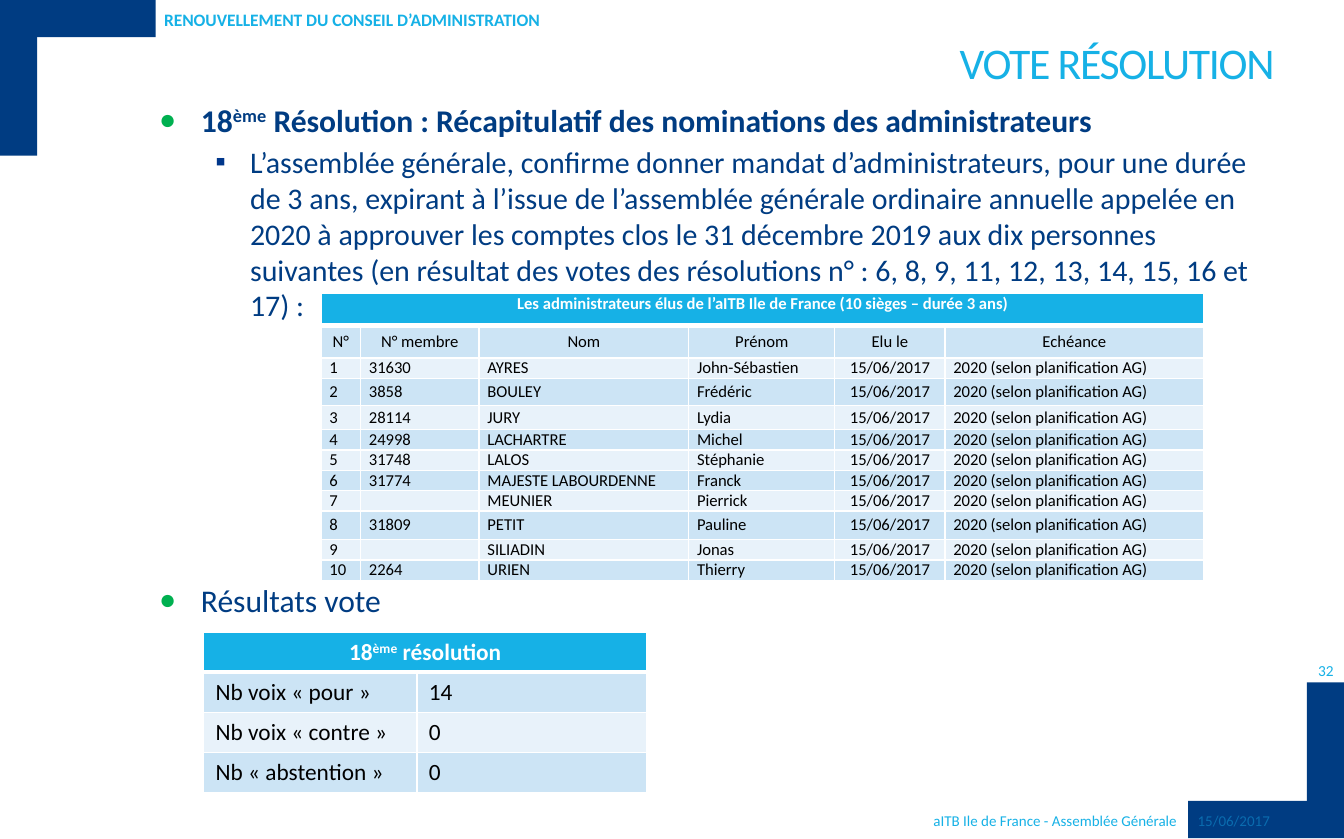
from pptx import Presentation, oxml, util as u
from pptx.dml.color import RGBColor
from pptx.enum import shapes, text

NAVY = RGBColor(0x00, 0x3C, 0x82)
CYAN = RGBColor(0x16, 0xB1, 0xE6)
BLUE = RGBColor(0x0A, 0x6C, 0xAF)
PALE = RGBColor(0xCC, 0xE4, 0xF5)
PALER = RGBColor(0xE8, 0xF2, 0xFA)
WHITE = RGBColor(0xFF, 0xFF, 0xFF)
BLACK = RGBColor(0x00, 0x00, 0x00)
FONT = "Calibri"
NS = 'xmlns:a="http://schemas.openxmlformats.org/drawingml/2006/main"'
LEFT, CENTER, RIGHT = (text.PP_ALIGN.LEFT, text.PP_ALIGN.CENTER, text.PP_ALIGN.RIGHT)
TOP, MIDDLE = text.MSO_ANCHOR.TOP, text.MSO_ANCHOR.MIDDLE

ELECTED = [
    ("31630", "AYRES", "John-Sébastien"),
    ("3858", "BOULEY", "Frédéric"),
    ("28114", "JURY", "Lydia"),
    ("24998", "LACHARTRE", "Michel"),
    ("31748", "LALOS", "Stéphanie"),
    ("31774", "MAJESTE LABOURDENNE", "Franck"),
    ("", "MEUNIER", "Pierrick"),
    ("31809", "PETIT", "Pauline"),
    ("", "SILIADIN", "Jonas"),
    ("2264", "URIEN", "Thierry"),
]
VOTES = [("Nb voix « pour »", "14"), ("Nb voix « contre »", "0"),
         ("Nb « abstention »", "0")]


def add_runs(p, content, size, color, bold=False):
    """Add runs to a paragraph; a piece marked with a leading ^ is superscript."""
    for piece in content if isinstance(content, list) else [content]:
        r = p.add_run()
        r.text = piece.lstrip("^")
        r.font.name, r.font.size, r.font.bold = FONT, u.Pt(size), bold
        r.font.color.rgb = color
        if piece.startswith("^"):
            r._r.get_or_add_rPr().set("baseline", "30000")


def set_margins(target, left, top, right, bottom):
    target.margin_left, target.margin_top = u.Inches(left), u.Inches(top)
    target.margin_right, target.margin_bottom = u.Inches(right), u.Inches(bottom)


def add_box(s, box, margins=(0.1, 0.05, 0.1, 0.05), anchor=TOP):
    tf = s.shapes.add_textbox(*map(u.Inches, box)).text_frame
    tf.word_wrap, tf.vertical_anchor = True, anchor
    set_margins(tf, *margins)
    return tf


def add_label(s, box, words, size, color, align=LEFT, bold=False, **frame):
    p = add_box(s, box, **frame).paragraphs[0]
    p.alignment = align
    add_runs(p, words, size, color, bold)


def add_corner(s, x, y, at_end):
    """Draw an L of two bars in a square box, its angle at top left or bottom right."""
    length, thick = 1.3, 0.31
    shift = length - thick if at_end else 0
    for bar in ((x, y + shift, length, thick), (x + shift, y, thick, length)):
        sp = s.shapes.add_shape(shapes.MSO_SHAPE.RECTANGLE, *map(u.Inches, bar))
        sp.shadow.inherit = False
        sp.fill.solid()
        sp.fill.fore_color.rgb = NAVY
        sp.line.fill.background()


def add_title(s, box):
    sp = s.shapes.title
    sp.left, sp.top, sp.width, sp.height = map(u.Inches, box)
    tf = sp.text_frame
    tf.word_wrap, tf.vertical_anchor = True, TOP
    tf.auto_size = text.MSO_AUTO_SIZE.NONE
    set_margins(tf, 0.2, 0.05, 0.09, 0)
    p = tf.paragraphs[0]
    p.alignment, p.line_spacing = RIGHT, u.Pt(24)
    add_runs(p, "VOTE RÉSOLUTION", 26.3, CYAN)
    p.runs[0]._r.get_or_add_rPr().set("spc", "-80")


def add_bullet(p, mark, color, indent, hanging, percent=100):
    pPr = p._p.get_or_add_pPr()
    pPr.set("marL", str(u.Inches(indent)))
    pPr.set("indent", str(-u.Inches(hanging)))
    for xml in (f'<a:buClr {NS}><a:srgbClr val="{color}"/></a:buClr>',
                f'<a:buSzPct {NS} val="{percent * 1000}"/>',
                f'<a:buFont {NS} typeface="Arial"/>',
                f'<a:buChar {NS} char="{mark}"/>'):
        pPr.append(oxml.parse_xml(xml))


def add_body(s, box):
    tf = add_box(s, box)
    heading = tf.paragraphs[0]
    mandate, results = tf.add_paragraph(), tf.add_paragraph()
    mandate.level = 1
    mandate.space_before = u.Pt(3)
    results.space_before = u.Pt(155)  # room for the table of elected members
    for p in (heading, results):
        add_bullet(p, "●", "00B050", 0.35, 0.35, 90)
    add_bullet(mandate, "▪", "00378B", 0.76, 0.29)
    add_runs(heading, ["18", "^ème", " Résolution : Récapitulatif des nominations "
                       "des administrateurs"], 19, NAVY, True)
    add_runs(mandate, "L’assemblée générale, confirme donner mandat d’administrateurs, "
             "pour une durée de 3 ans, expirant à l’issue de l’assemblée générale "
             "ordinaire annuelle appelée en 2020 à approuver les comptes clos le "
             "31 décembre 2019 aux dix personnes suivantes (en résultat des votes des "
             "résolutions n° : 6, 8, 9, 11, 12, 13, 14, 15, 16 et 17) :", 18, NAVY)
    add_runs(results, "Résultats vote", 19, NAVY)


def add_borders(cell, bottom):
    tcPr = cell._tc.get_or_add_tcPr()
    for side, width in (("L", 1), ("R", 1), ("T", 1), ("B", bottom)):
        tcPr.append(oxml.parse_xml(
            f'<a:ln{side} {NS} w="{u.Pt(width)}"><a:solidFill>'
            f'<a:srgbClr val="{WHITE}"/></a:solidFill></a:ln{side}>'))


def add_banded_table(s, x, y, widths, heights, header, rows, size, margins,
                     anchor=TOP, centered=lambda i, j: False):
    """Add a table with one merged header row over banded rows."""
    table = s.shapes.add_table(len(heights), len(widths), u.Inches(x), u.Inches(y),
                               u.Inches(sum(widths)), u.Inches(sum(heights))).table
    for col, width in zip(table.columns, widths):
        col.width = u.Inches(width)
    for row, height in zip(table.rows, heights):
        row.height = u.Inches(height)
    table.cell(0, 0).merge(table.cell(0, len(widths) - 1))
    for i, values in enumerate([[header] + [""] * (len(widths) - 1), *rows]):
        head = i == 0
        for j, value in enumerate(values):
            cell = table.cell(i, j)
            add_borders(cell, 3 if head else 1)
            cell.fill.solid()
            cell.fill.fore_color.rgb = CYAN if head else PALE if i % 2 else PALER
            cell.vertical_anchor = TOP if head else anchor
            set_margins(cell, *margins)
            p = cell.text_frame.paragraphs[0]
            p.alignment = CENTER if head or centered(i, j) else LEFT
            if value:
                add_runs(p, value, size, WHITE if head else BLACK, head)
            else:
                p._p.get_or_add_endParaRPr().set("sz", str(size * 100))


def add_elected_table(s, x, y):
    rows = [("N°", "N° membre", "Nom", "Prénom", "Elu le", "Echéance")]
    rows += [(str(n), *member, "15/06/2017", "2020 (selon planification AG)")
             for n, member in enumerate(ELECTED, 1)]
    heights = [0.27, 0.27, 0.17, 0.23, 0.2] + [0.17] * 4 + [0.24, 0.17, 0.17]
    add_banded_table(s, x, y, [0.33, 0.99, 1.75, 1.22, 0.92, 2.16], heights,
                     "Les administrateurs élus de l’aITB Ile de France "
                     "(10 sièges – durée 3 ans)", rows, 10, (0.07, 0, 0.07, 0), MIDDLE,
                     lambda i, j: i == 1 or j == 4)


def add_vote_table(s, x, y):
    add_banded_table(s, x, y, [1.78, 1.92], [0.33, 0.34, 0.33, 0.33],
                     ["18", "^ème", " résolution"], VOTES, 14, (0.1, 0.05, 0.1, 0.05))


def add_footer(s, y):
    add_label(s, (2.3, y, 7.62, 0.23), "aITB Ile de France - Assemblée Générale", 9,
              CYAN, RIGHT)
    add_label(s, (9.9, y, 1.31, 0.23), "15/06/2017", 9, BLUE)


def main():
    prs = Presentation()
    prs.slide_width, prs.slide_height = u.Cm(28.5), u.Cm(17.8)
    s = prs.slides.add_slide(prs.slide_layouts[5])
    add_corner(s, 9.92, 5.7, at_end=True)
    add_corner(s, 0, 0, at_end=False)
    add_title(s, (0.76, 0.35, 9.97, 0.84))
    add_footer(s, 6.73)
    add_label(s, (10.92, 5.49, 0.3, 0.22), "32", 9.2, CYAN, CENTER,
              margins=(0, 0, 0, 0), anchor=MIDDLE)
    add_body(s, (1.23, 0.79, 9.5, 5.7))
    add_label(s, (1.37, 0.03, 3.92, 0.26), "RENOUVELLEMENT DU CONSEIL D’ADMINISTRATION",
              10.5, CYAN, bold=True, margins=(0, 0.05, 0.1, 0.05), anchor=MIDDLE)
    add_vote_table(s, 1.7, 5.28)
    add_elected_table(s, 2.68, 2.45)
    prs.save("out.pptx")


if __name__ == "__main__":
    main()
